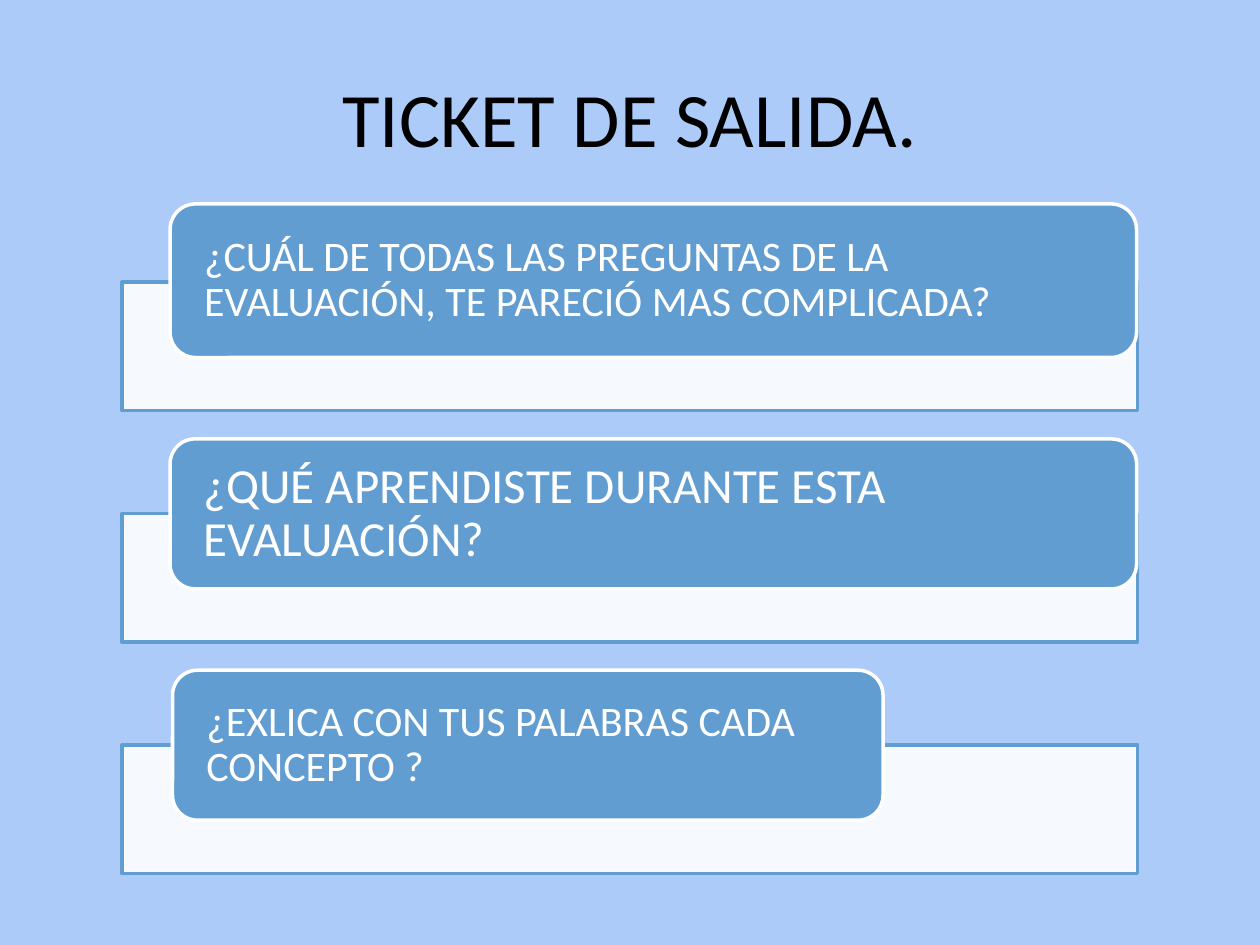
import pptx
import pptx.util
import pptx.dml.color
import pptx.enum.shapes
import pptx.enum.text
import lxml.etree

Pt = pptx.util.Pt
RGB = pptx.dml.color.RGBColor
SHAPE = pptx.enum.shapes.MSO_SHAPE
ALIGN = pptx.enum.text.PP_ALIGN
MIDDLE = pptx.enum.text.MSO_ANCHOR.MIDDLE

SKY = RGB(0xAC, 0xCB, 0xF9)
BLUE = RGB(0x62, 0x9D, 0xD1)
WHITE = RGB(255, 255, 255)
BLACK = RGB(0, 0, 0)

TITLE = "TICKET DE SALIDA."
# question, text size, card left, card width, card height
CARDS = [
    ("¿CUÁL DE TODAS LAS PREGUNTAS DE LA EVALUACIÓN, TE PARECIÓ MAS COMPLICADA?",
     24, 97.2, 552.3, 87.8),
    ("¿QUÉ APRENDISTE DURANTE ESTA EVALUACIÓN?", 28, 97.2, 552.3, 85.7),
    ("¿EXLICA CON TUS PALABRAS CADA CONCEPTO ?", 24, 98.6, 406, 85.7),
]
BAR_LEFT, BAR_TOP, BAR_WIDE, BAR_HIGH = 69.8, 161.3, 580.3, 73.4
STEP = 132.2
OVERLAP = 43  # how far a card reaches down into its bar


def put(item, values):
    for name, value in values.items():
        setattr(item, name, value)


def add_box(slide, kind, left, top, wide, high, fill, line):
    box = slide.shapes.add_shape(kind, Pt(left), Pt(top), Pt(wide), Pt(high))
    box.shadow.inherit = False
    box.fill.solid()
    box.fill.fore_color.rgb = fill
    box.line.color.rgb = line
    box.line.width = Pt(2)
    return box


def fade(box, share):
    """Set the opacity of a solid fill, in percent."""
    color = box.fill._xPr.find(".//{*}srgbClr")
    tag = lxml.etree.QName(color).namespace
    lxml.etree.SubElement(color, f"{{{tag}}}alpha", val=str(share * 1000))


def write(box, text, size, color, align, pad):
    frame = box.text_frame
    put(frame, {"word_wrap": True, "vertical_anchor": MIDDLE,
                "margin_left": Pt(pad), "margin_right": Pt(pad),
                "margin_top": 0, "margin_bottom": 0})
    para = frame.paragraphs[0]
    para.alignment = align
    run = para.add_run()
    run.text = text
    put(run.font, {"size": Pt(size), "name": "Calibri"})
    run.font.color.rgb = color
    return para


def main():
    deck = pptx.Presentation()
    put(deck, {"slide_width": Pt(720), "slide_height": Pt(540)})
    slide = deck.slides.add_slide(deck.slide_layouts[5])
    slide.background.fill.solid()
    slide.background.fill.fore_color.rgb = SKY

    title = slide.shapes.title
    put(title, {"left": Pt(36), "top": Pt(21.6),
                "width": Pt(648), "height": Pt(90)})
    write(title, TITLE, 44, BLACK, ALIGN.CENTER, 7.2)

    for row, (text, size, left, wide, high) in enumerate(CARDS):
        top = BAR_TOP + row * STEP
        bar = add_box(slide, SHAPE.RECTANGLE, BAR_LEFT, top,
                      BAR_WIDE, BAR_HIGH, WHITE, BLUE)
        fade(bar, 90)
        card = add_box(slide, SHAPE.ROUNDED_RECTANGLE, left,
                       top + OVERLAP - high, wide, high, BLUE, WHITE)
        para = write(card, text, size, WHITE, ALIGN.LEFT, 15.2)
        para.line_spacing = 0.9

    deck.save("out.pptx")


if __name__ == "__main__":
    main()
